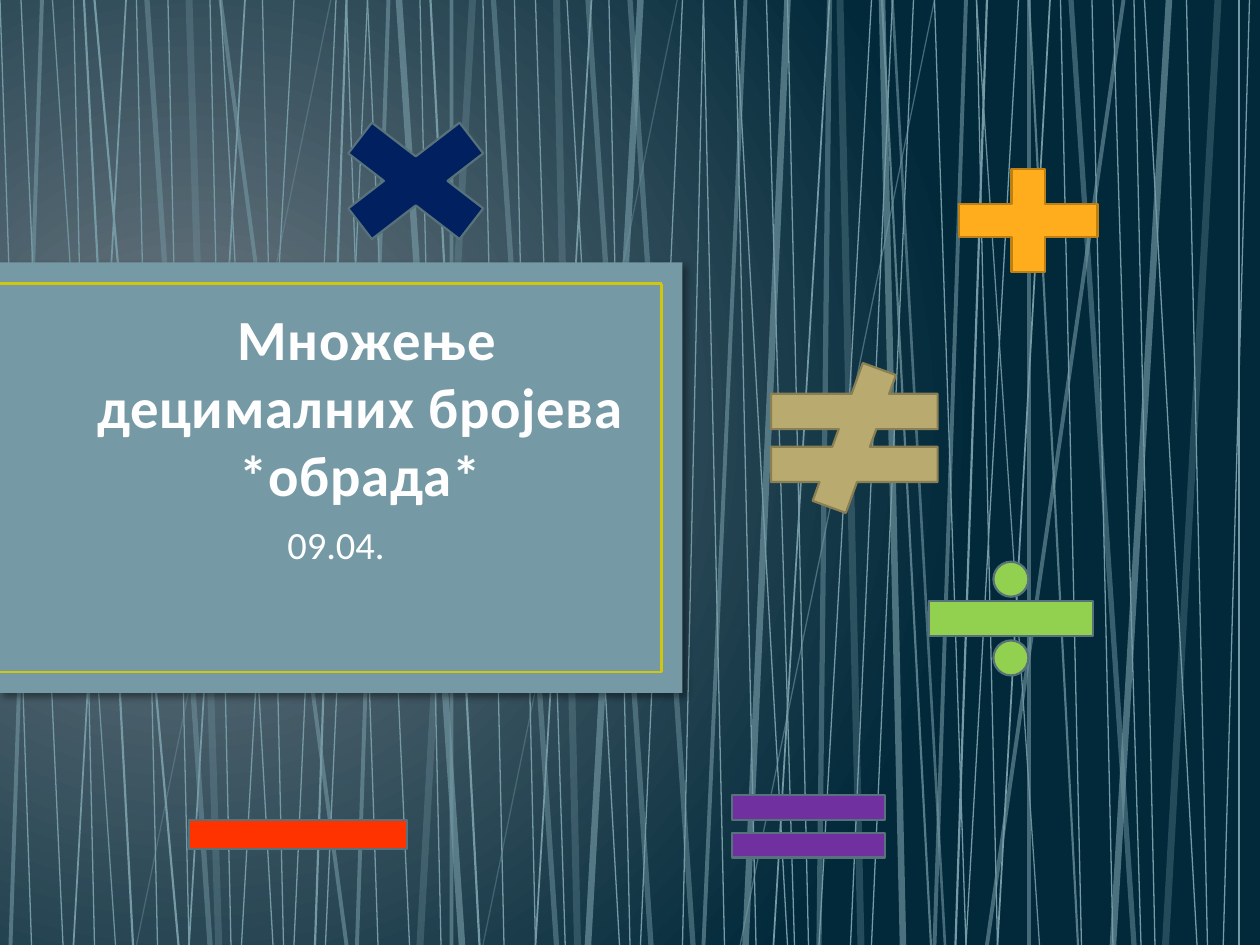
import lxml.etree
import pptx
import pptx.dml.color
import pptx.enum.shapes
import pptx.enum.text
import pptx.oxml.ns
import pptx.util

Pt = pptx.util.Pt
qn = pptx.oxml.ns.qn
SubElement = lxml.etree.SubElement
colour = pptx.dml.color.RGBColor.from_string
MSO_SHAPE = pptx.enum.shapes.MSO_SHAPE
ANCHOR = pptx.enum.text.MSO_ANCHOR

deck = pptx.Presentation()
deck.slide_width, deck.slide_height = Pt(720), Pt(540)
slide = deck.slides.add_slide(deck.slide_layouts[6])


def draw_line(x1, y1, x2, y2, hue, width, opacity=100):
    line = slide.shapes.add_connector(
        pptx.enum.shapes.MSO_CONNECTOR.STRAIGHT, Pt(x1), Pt(y1), Pt(x2), Pt(y2))
    line.line.color.rgb = colour(hue)
    line.line.width = Pt(width)
    properties = line.element.spPr
    if opacity < 100:
        tint = next(properties.iter(qn("a:srgbClr")))
        SubElement(tint, qn("a:alpha"), val=str(opacity * 1000))
    SubElement(properties, qn("a:effectLst"))


def write(text, top, height, size, hue, bold=False, anchor=ANCHOR.TOP,
          indent=0, before=0, spacing=0, outline=None):
    frame = slide.shapes.add_textbox(Pt(18), Pt(top), Pt(348), Pt(height)).text_frame
    frame.word_wrap = True
    frame.vertical_anchor = anchor
    paragraph = frame.paragraphs[0]
    paragraph.alignment = pptx.enum.text.PP_ALIGN.CENTER
    paragraph.space_before = Pt(before)
    paragraph._p.get_or_add_pPr().set("marL", str(Pt(indent)))
    for index, words in enumerate(text.split("\n")):
        if index:
            paragraph.add_line_break()
        run = paragraph.add_run()
        run.text = words
        run.font.name = "Calibri"
        run.font.size = Pt(size)
        run.font.bold = bold
        run.font.color.rgb = colour(hue)
        letters = run._r.get_or_add_rPr()
        if spacing:
            letters.set("spc", str(int(spacing * 100)))
        if outline:
            edge = lxml.etree.Element(qn("a:ln"), w=str(Pt(1.05)))
            letters.insert(0, edge)
            SubElement(SubElement(edge, qn("a:solidFill")), qn("a:srgbClr"), val=outline)


backdrop = slide.background.fill
backdrop.gradient()
for stop, hue, position in zip(backdrop.gradient_stops, ["717C84", "01293A"], [0, 1]):
    stop.color.rgb = colour(hue)
    stop.position = position
gradient = next(slide.element.iter(qn("a:gradFill")))
for direction in gradient.findall(qn("a:lin")):
    gradient.remove(direction)
glow = lxml.etree.Element(qn("a:path"), path="circle")
SubElement(glow, qn("a:fillToRect"), l="15000", t="50000", r="85000", b="60000")
gradient.find(qn("a:gsLst")).addnext(glow)

strands = {
    (0.75, 100): [
        (150, 162), (126, 156), (168, 138), (0, 18), (12, 36), (120, 132), (42, 54),
        (192, 168), (210, 186), (78, 90), (96, 108), (348, 360), (324, 354), (198, 216),
        (210, 234), (240, 252), (390, 366), (402, 390), (306, 323), (276, 288), (294, 306),
        (420, 450), (498, 468), (450, 462), (522, 498), (510, 486), (438, 454), (402, 414),
        (420, 432), (534, 552), (558, 570), (606, 618), (624, 636), (678, 690), (654, 684),
        (648, 660), (714, 699), (636, 652), (582, 552)],
    (0.75, 90): [(30, 66), (558, 594)],
    (0.75, 39): [(189, 78), (387, 276)],
    (0.75, 56): [(534, 423)],
    (1, 100): [(72, 42), (140, 108), (338, 306), (474, 442), (600, 570)],
    (1.25, 100): [(54, 102), (48, 76), (198, 180), (246, 274), (564, 546), (708, 708)],
    (1.25, 72): [(588, 616), (504, 532)],
    (1.5, 58): [(510, 540)],
    (2.25, 58): [(24, 6), (126, 198), (222, 204), (258, 258), (426, 402), (552, 534),
                 (588, 588), (642, 564)],
    (3, 47): [(84, 120), (282, 318), (336, 372), (612, 648), (474, 468), (360, 396)],
    (3.75, 63): [(366, 336), (228, 264), (668, 636), (504, 516), (450, 426)],
    (4, 30): [(108, 125), (270, 240), (318, 330), (480, 492), (696, 666)],
}
for (width, opacity), ends in strands.items():
    for top_x, bottom_x in ends:
        draw_line(top_x, 0, bottom_x, 540, "759AA5", width, opacity)

panel = slide.shapes.add_shape(MSO_SHAPE.RECTANGLE, 0, Pt(150), Pt(390), Pt(246))
panel.fill.solid()
panel.fill.fore_color.rgb = colour("759AA5")
panel.line.fill.background()
panel.shadow.inherit = False
shade = SubElement(panel.element.spPr.find(qn("a:effectLst")), qn("a:outerShdw"),
                   blurRad=str(Pt(4)), dist=str(Pt(3)), dir="2700000", rotWithShape="0")
SubElement(SubElement(shade, qn("a:srgbClr"), val="000000"), qn("a:alpha"), val="40000")

for border in [(0, 162, 378, 162), (0, 384, 378, 384), (378, 162, 378, 384)]:
    draw_line(*border, "CFC60D", 1.5)

write(" Множење децималних бројева\n*обрада*", 168, 126, 32.4, "FEFEFE", bold=True,
      anchor=ANCHOR.BOTTOM, indent=28, spacing=0.4, outline="384F55")
write("09.04.", 294, 84, 22, "FFFFFF", before=4.4)

signs = [
    (MSO_SHAPE.MATH_PLUS, 533.5, 85.7, 108, 80.6, "FFAD1C", "BD8015"),
    (MSO_SHAPE.MATH_DIVIDE, 514, 311, 127.4, 85, "92D050", "57727A"),
    (MSO_SHAPE.MATH_MULTIPLY, 176.4, 56.2, 122.4, 94.3, "002060", "57727A"),
    (MSO_SHAPE.MATH_NOT_EQUAL, 423.4, 207.4, 129.6, 85.7, "B9AB6F", "897F52"),
    (MSO_SHAPE.MATH_MINUS, 85.7, 442, 169.2, 69.8, "FF3300", "57727A"),
    (MSO_SHAPE.MATH_EQUAL, 402.5, 442, 118.8, 60.5, "7030A0", "57727A"),
]
for kind, left, top, width, height, hue, rim in signs:
    sign = slide.shapes.add_shape(kind, Pt(left), Pt(top), Pt(width), Pt(height))
    sign.fill.solid()
    sign.fill.fore_color.rgb = colour(hue)
    sign.line.color.rgb = colour(rim)
    sign.line.width = Pt(1.25)
    sign.shadow.inherit = False

deck.save("out.pptx")
